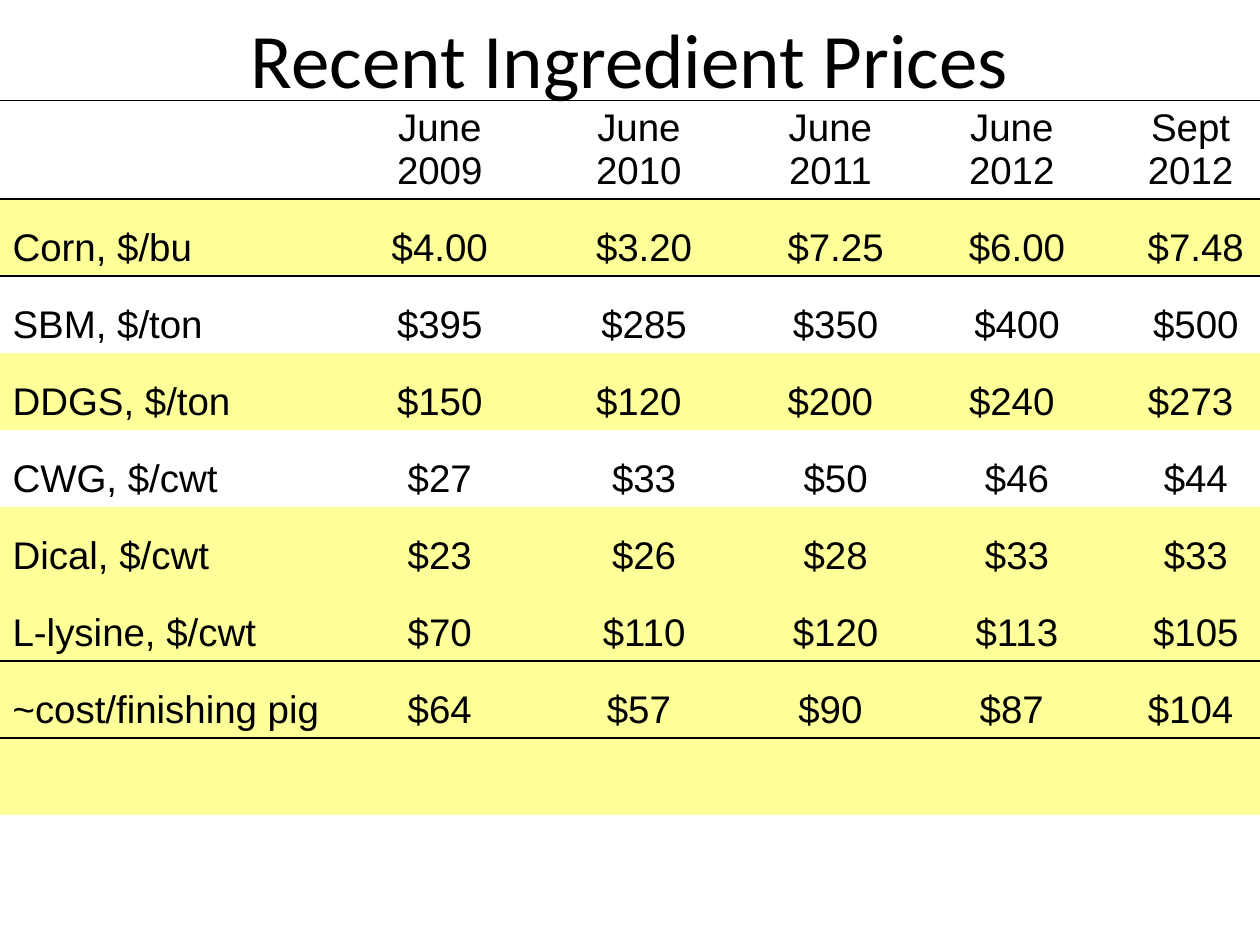
"""Build a slide with a table of recent feed ingredient prices."""
from lxml import etree
from pptx import Presentation
from pptx import util as u
from pptx.dml import color
from pptx.enum import text
from pptx.oxml import ns

COLORS = {"ink": "000000", "band": "FFFF99"}
PLAIN_STYLE = "{2D5ABB26-0587-4C30-8999-92F81FD0307C}"
COLUMN_WIDTHS = [194.4, 113.8, 113.8, 105.1, 102.2, 102.2]
HEADER_HEIGHT, ROW_HEIGHT = 42, 44
HANGING = 27
NUDGE = 6
HEADER = ["", "June 2009", "June 2010", "June 2011", "June 2012", "Sept 2012"]
PRICES = [
    ["Corn, $/bu", "$4.00", "$3.20", "$7.25", "$6.00", "$7.48"],
    ["SBM, $/ton", "$395", "$285", "$350", "$400", "$500"],
    ["DDGS, $/ton", "$150", "$120", "$200", "$240", "$273"],
    ["CWG, $/cwt", "$27", "$33", "$50", "$46", "$44"],
    ["Dical, $/cwt", "$23", "$26", "$28", "$33", "$33"],
    ["L-lysine, $/cwt", "$70", "$110", "$120", "$113", "$105"],
    ["~cost/finishing pig", "$64", "$57", "$90", "$87", "$104"],
    [""] * 6,
]
BANDED_ROWS = {1, 3, 5, 6, 7, 8}
NUDGED_ROWS = {1, 2, 4, 5, 6}
RULED_EDGES = {0, 1, 7, 8}


def write(frame, words, size=22, font="Arial", centered=True, hanging=0, nudge=0):
    paragraph = frame.paragraphs[0]
    paragraph.alignment = text.PP_ALIGN.CENTER if centered else text.PP_ALIGN.LEFT
    if hanging:
        properties = paragraph._p.get_or_add_pPr()
        properties.set("marL", str(u.Pt(hanging + nudge)))
        properties.set("indent", str(u.Pt(-hanging)))
    run = paragraph.add_run()
    run.text = words
    run.font.size = u.Pt(size)
    run.font.name = font
    run.font.color.rgb = color.RGBColor.from_string(COLORS["ink"])


class SlideBuilder:
    def __init__(self, presentation):
        self.slide = presentation.slides.add_slide(presentation.slide_layouts[5])

    def title(self, words, left, top, width, height):
        shape = self.slide.shapes.title
        shape.left, shape.top = u.Pt(left), u.Pt(top)
        shape.width, shape.height = u.Pt(width), u.Pt(height)
        shape.text_frame.vertical_anchor = text.MSO_ANCHOR.MIDDLE
        write(shape.text_frame, words, size=44, font="Calibri")

    def border(self, cell, side):
        properties = cell._tc.get_or_add_tcPr()
        line = etree.SubElement(properties, ns.qn(f"a:{side}"), w=str(u.Pt(1)))
        fill = etree.SubElement(line, ns.qn("a:solidFill"))
        etree.SubElement(fill, ns.qn("a:srgbClr"), val=COLORS["ink"])

    def cell(self, cell, words, row, column):
        cell.vertical_anchor = text.MSO_ANCHOR.BOTTOM
        for side, edge in (("lnT", row), ("lnB", row + 1)):
            if edge in RULED_EDGES:
                self.border(cell, side)
        if row in BANDED_ROWS:
            cell.fill.solid()
            cell.fill.fore_color.rgb = color.RGBColor.from_string(COLORS["band"])
        else:
            cell.fill.background()
        if words:
            nudged = row in NUDGED_ROWS and column > 1
            write(cell.text_frame, words, centered=column > 0,
                  hanging=HANGING if row else 0, nudge=NUDGE if nudged else 0)

    def table(self, rows, left, top):
        heights = [HEADER_HEIGHT] + [ROW_HEIGHT] * (len(rows) - 1)
        shape = self.slide.shapes.add_table(
            len(rows), len(COLUMN_WIDTHS), u.Pt(left), u.Pt(top),
            u.Pt(sum(COLUMN_WIDTHS)), u.Pt(sum(heights)))
        table = shape.table
        table.first_row = table.horz_banding = False
        table._tbl.tblPr.find(ns.qn("a:tableStyleId")).text = PLAIN_STYLE
        for column, width in zip(table.columns, COLUMN_WIDTHS):
            column.width = u.Pt(width)
        for row, (height, values) in enumerate(zip(heights, rows)):
            table.rows[row].height = u.Pt(height)
            for column, words in enumerate(values):
                self.cell(table.cell(row, column), words, row, column)


def main():
    presentation = Presentation()
    presentation.slide_width, presentation.slide_height = u.Pt(720), u.Pt(540)
    builder = SlideBuilder(presentation)
    builder.title("Recent Ingredient Prices", 54, -12, 612, 90)
    builder.table([HEADER] + PRICES, 0, 57.4)
    presentation.save("out.pptx")


if __name__ == "__main__":
    main()
